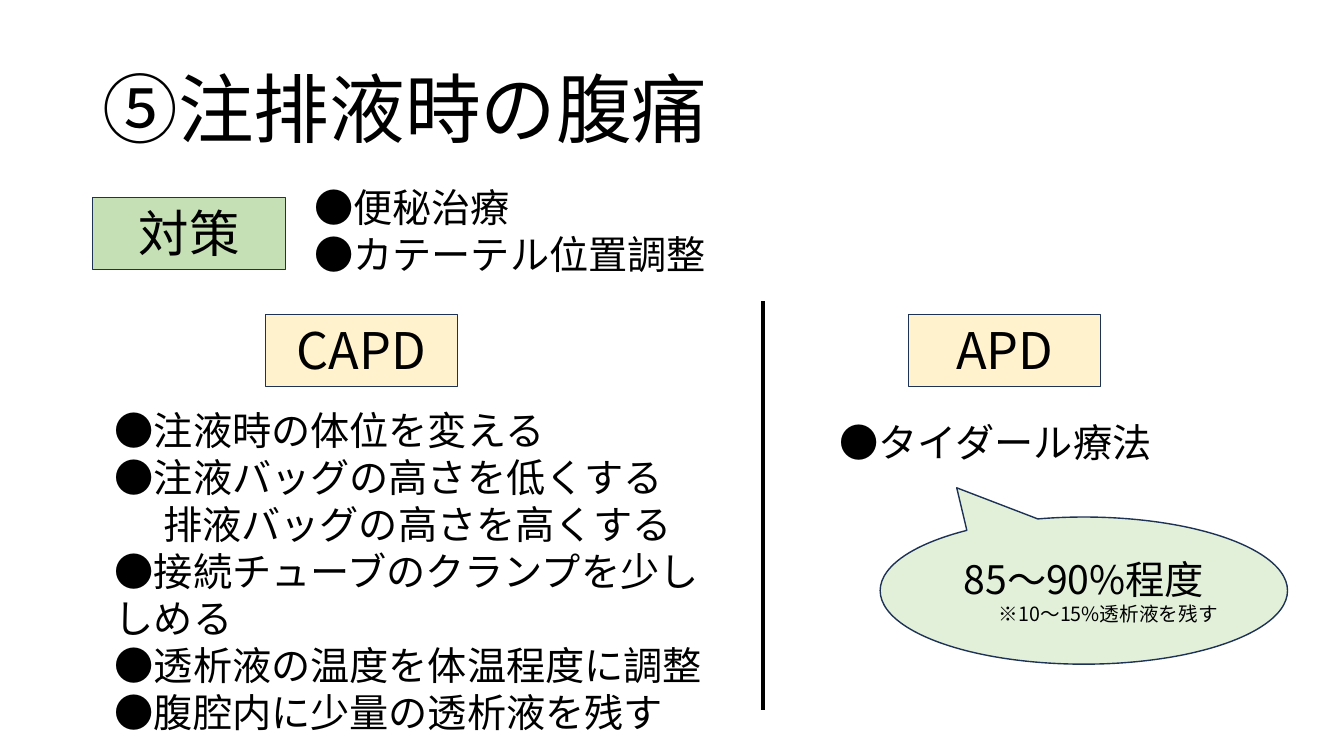
from lxml.etree import SubElement
from pptx import Presentation
from pptx.dml.color import RGBColor
from pptx.enum.shapes import MSO_CONNECTOR, MSO_SHAPE
from pptx.enum.text import MSO_ANCHOR, PP_ALIGN
from pptx.oxml.ns import qn
from pptx.util import Inches, Pt

FONT = "Noto Sans CJK JP"
COLORS = {
    "text": "000000",
    "outline": "1E3256",
    "measures": "C5E0B4",
    "method": "FFF2CC",
    "callout": "E2F0D9",
}
LABEL_WIDTH, LABEL_HEIGHT = 1.91, 0.71


def color(name):
    """Return the named colour."""
    return RGBColor.from_string(COLORS[name])


def style_paragraph(paragraph, text, size, align=PP_ALIGN.LEFT, indent=0):
    """Write one paragraph in the slide font."""
    paragraph.text = text
    paragraph.alignment = align
    properties = paragraph._p.get_or_add_pPr()
    if indent:
        properties.set("marL", str(Inches(indent)))
    paragraph.font.size = Pt(size)
    paragraph.font.color.rgb = color("text")
    paragraph.font.name = FONT
    SubElement(properties.find(qn("a:defRPr")), qn("a:ea"), typeface=FONT)


def add_text(slide, box, lines, size=28, anchor=MSO_ANCHOR.TOP):
    """Add a text box of (text, indent) lines and return its frame."""
    frame = slide.shapes.add_textbox(*map(Inches, box)).text_frame
    frame.word_wrap = True
    frame.vertical_anchor = anchor
    for index, (text, indent) in enumerate(lines):
        paragraph = frame.add_paragraph() if index else frame.paragraphs[0]
        style_paragraph(paragraph, text, size, indent=indent)
    return frame


def add_outlined_shape(slide, kind, box, fill, line_width):
    """Add a filled, outlined shape without shadow."""
    shape = slide.shapes.add_shape(kind, *map(Inches, box))
    shape.shadow.inherit = False
    shape.fill.solid()
    shape.fill.fore_color.rgb = color(fill)
    shape.line.color.rgb = color("outline")
    shape.line.width = Pt(line_width)
    shape.text_frame.word_wrap = True
    return shape


def add_label(slide, left, top, text, fill):
    """Add a rectangular heading label."""
    box = (left, top, LABEL_WIDTH, LABEL_HEIGHT)
    frame = add_outlined_shape(slide, MSO_SHAPE.RECTANGLE, box, fill, 0.75).text_frame
    frame.vertical_anchor = MSO_ANCHOR.TOP
    style_paragraph(frame.paragraphs[0], text, 36, PP_ALIGN.CENTER)


def add_title(slide, box):
    """Add the slide title."""
    frame = add_text(slide, box, [("⑤注排液時の腹痛", 0)], 54, MSO_ANCHOR.MIDDLE)
    frame.paragraphs[0].line_spacing = 0.9


def add_measures(slide, left, top):
    """Add the general measures: label and list."""
    add_label(slide, left, top + 0.19, "対策", "measures")
    lines = [("●便秘治療", 0), ("●カテーテル位置調整", 0)]
    add_text(slide, (left + 2.1, top, 4.36, 1.04), lines)


def add_capd_column(slide, left, top):
    """Add the CAPD label and its list."""
    add_label(slide, left + 1.59, top, "CAPD", "method")
    lines = [
        ("●注液時の体位を変える", 0),
        ("●注液バッグの高さを低くする", 0),
        ("排液バッグの高さを高くする", 0.48),
        ("●接続チューブのクランプを少ししめる", 0),
        ("●透析液の温度を体温程度に調整", 0),
        ("●腹腔内に少量の透析液を残す", 0),
    ]
    add_text(slide, (left, top + 0.86, 6.34, 2.93), lines)


def add_apd_column(slide, left, top):
    """Add the APD label, its therapy and the callout."""
    add_label(slide, left + 0.78, top, "APD", "method")
    add_text(slide, (left, top + 0.98, 3.48, 0.57), [("●タイダール療法", 0)])
    box = (left + 0.5, top + 2.01, 4.04, 1.46)
    callout = add_outlined_shape(slide, MSO_SHAPE.OVAL_CALLOUT, box, "callout", 1)
    callout.adjustments[0] = -0.312
    callout.adjustments[1] = -0.699
    frame = callout.text_frame
    frame.vertical_anchor = MSO_ANCHOR.MIDDLE
    style_paragraph(frame.paragraphs[0], "85〜90%程度", 28, PP_ALIGN.CENTER)
    style_paragraph(frame.add_paragraph(), "※10〜15%透析液を残す", 14, PP_ALIGN.RIGHT)


def add_divider(slide, left, top, height):
    """Add the vertical line between the columns."""
    ends = map(Inches, (left, top, left, top + height))
    divider = slide.shapes.add_connector(MSO_CONNECTOR.STRAIGHT, *ends)
    divider.line.color.rgb = color("text")
    divider.line.width = Pt(2.5)
    SubElement(divider._element.spPr, qn("a:effectLst"))


def main():
    """Build and save the slide."""
    presentation = Presentation()
    presentation.slide_width = Inches(13.33)
    presentation.slide_height = Inches(7.5)
    slide = presentation.slides.add_slide(presentation.slide_layouts[6])
    add_title(slide, (0.92, 0.4, 11.5, 1.45))
    add_measures(slide, 0.92, 1.77)
    add_capd_column(slide, 1.04, 3.12)
    add_apd_column(slide, 8.23, 3.12)
    add_divider(slide, 7.57, 2.99, 4.05)
    presentation.save("out.pptx")


if __name__ == "__main__":
    main()
